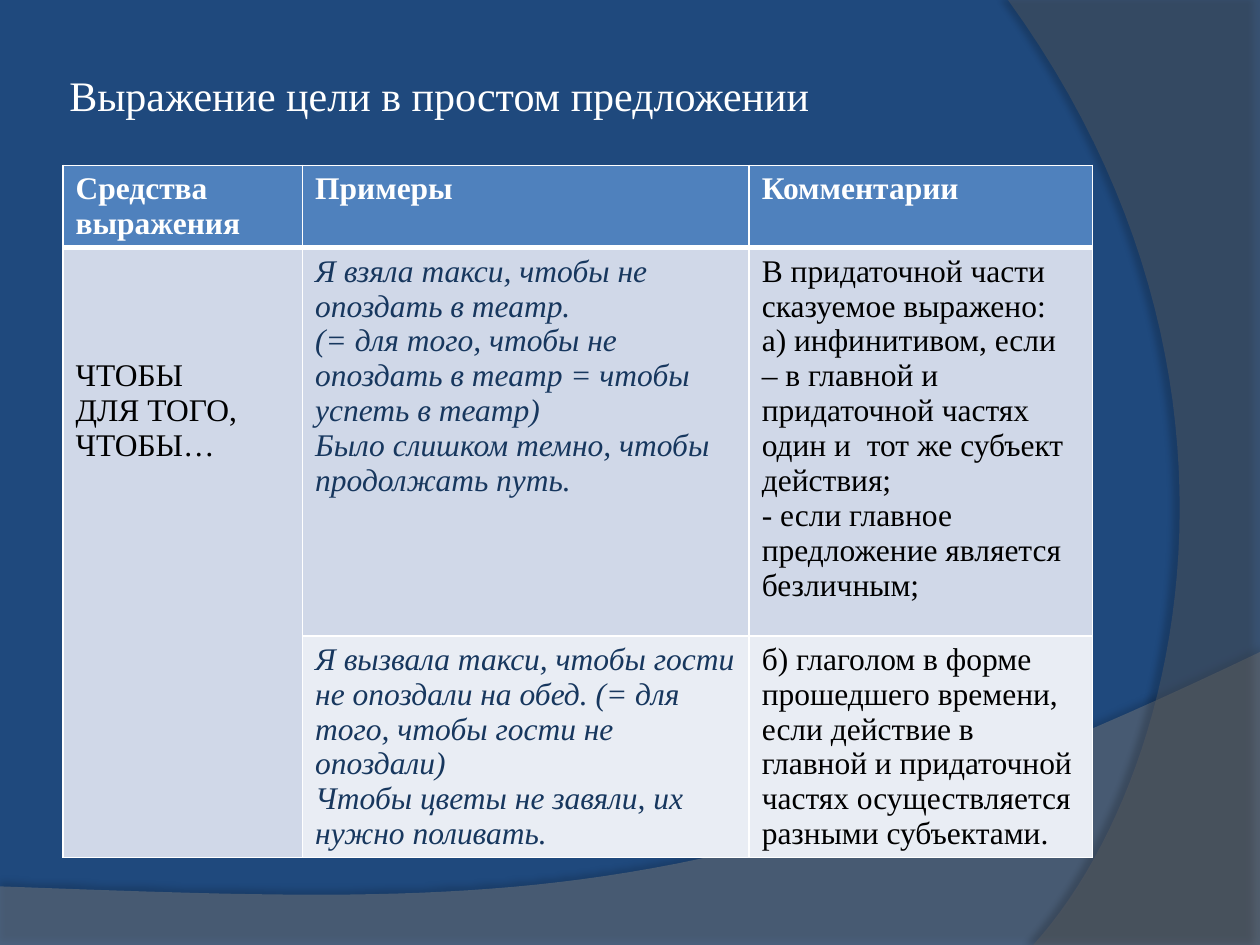
import pptx
import pptx.dml.color
import pptx.enum.text
import pptx.oxml
import pptx.oxml.ns
import pptx.util
from lxml import etree

WIDE, HIGH = pptx.util.Inches(10), pptx.util.Inches(7.5)
FONT = "Times New Roman"
WHITE, BLACK, NAVY = "FFFFFF", "000000", "17375E"
HEAD, BAND, PALE = "4F81BD", "D0D8E8", "E9EDF4"
COLS = (1.9, 3.54, 2.72)
ROWS = (0.65, 3.08, 1.76)

HEADS = ("Средства выражения", "Примеры", "Комментарии")
MEANS = ("ЧТОБЫ", "ДЛЯ ТОГО, ЧТОБЫ…")
BODY = (
    (
        ("Я взяла такси, чтобы не опоздать в театр.",
         "(= для того, чтобы не опоздать в театр = чтобы успеть в театр)",
         "Было слишком темно, чтобы продолжать путь."),
        ("В придаточной части сказуемое выражено:",
         "а) инфинитивом, если – в главной и придаточной частях один и  тот же субъект действия;",
         "- если главное предложение является безличным;"),
    ),
    (
        ("Я вызвала такси, чтобы гости не опоздали на обед. (= для того, чтобы гости не опоздали)",
         "Чтобы цветы не завяли, их нужно поливать."),
        ("б) глаголом в форме прошедшего времени, если действие в главной и "
         "придаточной частях осуществляется разными субъектами.",),
    ),
)


def tint(code):
    """Turn a hex string into a colour."""
    return pptx.dml.color.RGBColor.from_string(code)


def place(box):
    """Turn shares of the slide into lengths."""
    x, y, w, h = box
    return int(x * WIDE), int(y * HIGH), int(w * WIDE), int(h * HIGH)


def node(up, tag, **attrs):
    """Add a drawing element with the given attributes."""
    item = etree.SubElement(up, pptx.oxml.ns.qn("a:" + tag))
    for name, value in attrs.items():
        item.set(name, str(value))
    return item


def write(frame, lines, color, size=18, bold=False, slant=False):
    """Write each line as a paragraph of one run."""
    frame.word_wrap = True
    for i, line in enumerate(lines):
        para = frame.add_paragraph() if i else frame.paragraphs[0]
        para.alignment = pptx.enum.text.PP_ALIGN.LEFT
        run = para.add_run()
        run.text = line
        font = run.font
        font.name, font.size = FONT, pptx.util.Pt(size)
        font.bold, font.italic = bold, slant
        font.color.rgb = tint(color)


def curve(a, b, c, d, steps=48):
    """List points along a cubic curve."""
    return [
        tuple((1 - t) ** 3 * p + 3 * (1 - t) ** 2 * t * q + 3 * (1 - t) * t * t * r + t ** 3 * s
              for p, q, r, s in zip(a, b, c, d))
        for t in (i / steps for i in range(steps + 1))
    ]


def wave(slide, box, points, color, alpha, shade, gap, turn):
    """Draw a translucent shadowed wave from points relative to its box."""
    x, y, w, h = place(box)
    spots = [(int(x + u * w), int(y + v * h)) for u, v in points]
    pen = slide.shapes.build_freeform(*spots[0], scale=1.0)
    pen.add_line_segments(spots[1:], close=True)
    shape = pen.convert_to_shape()
    shape.fill.solid()
    shape.fill.fore_color.rgb = tint(color)
    shape.line.fill.background()
    shape.shadow.inherit = False
    props = shape._element.spPr
    paint = props.find(pptx.oxml.ns.qn("a:solidFill"))
    node(paint[0], "alpha", val=alpha * 1000)
    cast = node(props.find(pptx.oxml.ns.qn("a:effectLst")), "outerShdw",
                blurRad=pptx.util.Pt(4), dist=pptx.util.Pt(gap), dir=turn * 60000,
                algn="ctr", rotWithShape=0)
    node(node(cast, "srgbClr", val=BLACK), "alpha", val=shade * 1000)


def title(slide, box, text):
    """Place the title above the waves."""
    shape = slide.shapes.title
    shape.left, shape.top, shape.width, shape.height = place(box)
    frame = shape.text_frame
    frame.vertical_anchor = pptx.enum.text.MSO_ANCHOR.MIDDLE
    frame.margin_left = frame.margin_right = pptx.util.Inches(0.05)
    write(frame, [text], WHITE, 24)
    shape._element.getparent().append(shape._element)


def edge(cell, base):
    """Draw white borders, with the given weight at the base."""
    props = cell._tc.get_or_add_tcPr()
    for i, (side, width) in enumerate(zip("LRTB", (1, 1, 1, base))):
        line = node(props, "ln" + side, w=pptx.util.Pt(width))
        node(node(line, "solidFill"), "srgbClr", val=WHITE)
        props.insert(i, line)


def grid(slide, box):
    """Build the table of means, examples and comments."""
    x, y, w, h = place(box)
    table = slide.shapes.add_table(len(ROWS), len(COLS), x, y, w, h).table
    table.horz_banding = False
    for col, part in zip(table.columns, COLS):
        col.width = int(w * part / sum(COLS))
    for row, part in zip(table.rows, ROWS):
        row.height = int(h * part / sum(ROWS))
    for r, color in enumerate((HEAD, BAND, PALE)):
        for c in range(len(COLS)):
            cell = table.cell(r, c)
            cell.fill.solid()
            cell.fill.fore_color.rgb = tint(color)
            edge(cell, 1 if r else 3)
    for c, text in enumerate(HEADS):
        write(table.cell(0, c).text_frame, [text], WHITE, bold=True)
    means = table.cell(1, 0)
    means.merge(table.cell(2, 0))
    means.margin_top = int(h * 0.16)
    write(means.text_frame, MEANS, BLACK)
    for r, (cases, notes) in enumerate(BODY, 1):
        write(table.cell(r, 1).text_frame, cases, NAVY, slant=True)
        write(table.cell(r, 2).text_frame, notes, BLACK)


def main():
    """Build and save the slide."""
    deck = pptx.Presentation()
    deck.slide_width, deck.slide_height = WIDE, HIGH
    slide = deck.slides.add_slide(deck.slide_layouts[5])
    slide.background.fill.solid()
    slide.background.fill.fore_color.rgb = tint("1F497D")
    low = curve((1, 0), (0.56, 0.91), (0.39, 0.86), (0, 0.8))
    wave(slide, (0, 0.69, 1, 0.31), [(0, 1), (1, 1)] + low, "7F7F7F", 45, 35, 3.5, 270)
    side = curve((0.1, 1), (0.68, 0.83), (1.09, 0.4), (0, 0))
    wave(slide, (0.8, 0, 0.2, 1), [(1, 0), (1, 1)] + side, "5E5E5E", 40, 45, 4, 180)
    title(slide, (0.05, 0.04, 0.82, 0.12), "Выражение цели в простом предложении")
    grid(slide, (0.05, 0.175, 0.817, 0.732))
    deck.save("out.pptx")


if __name__ == "__main__":
    main()
